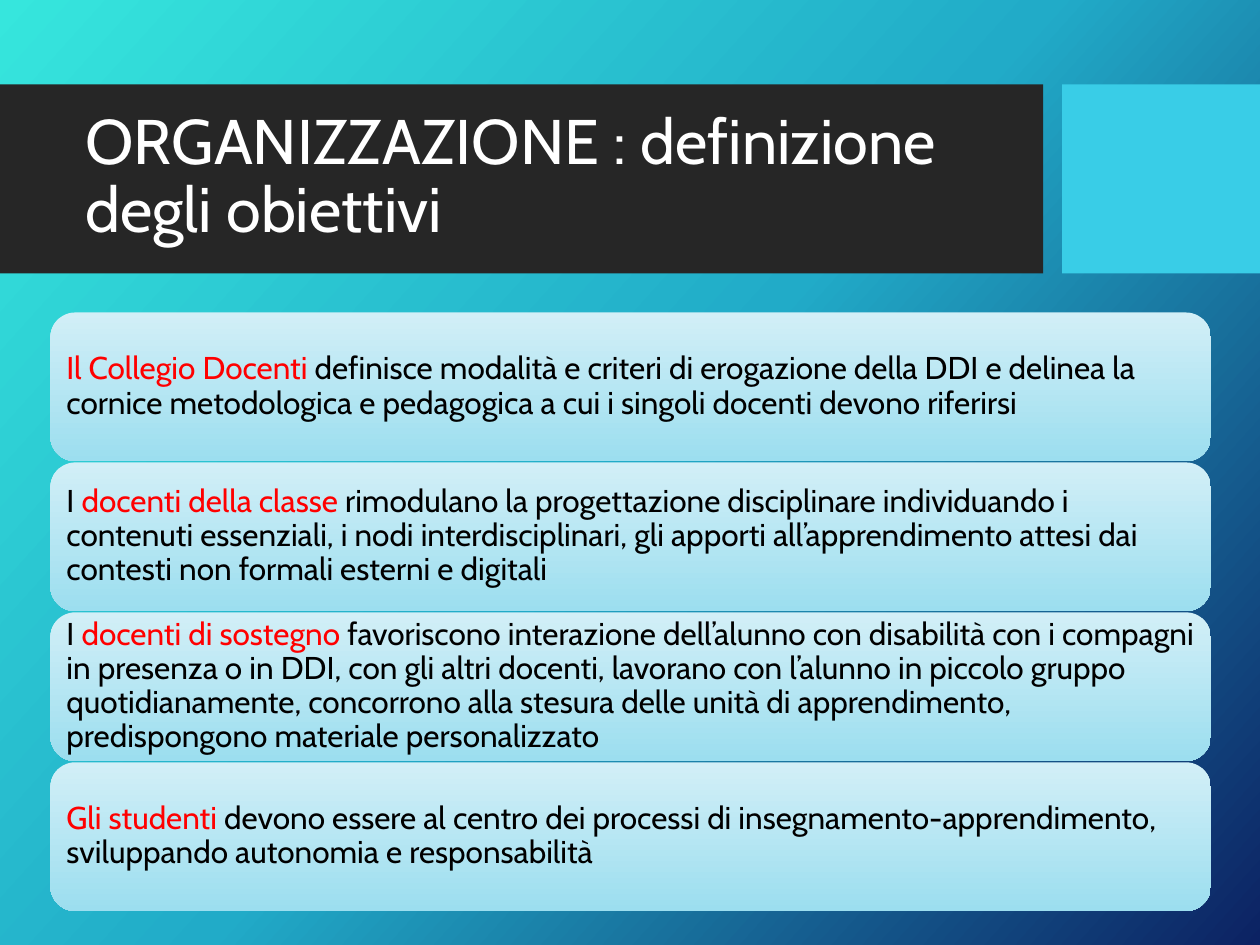
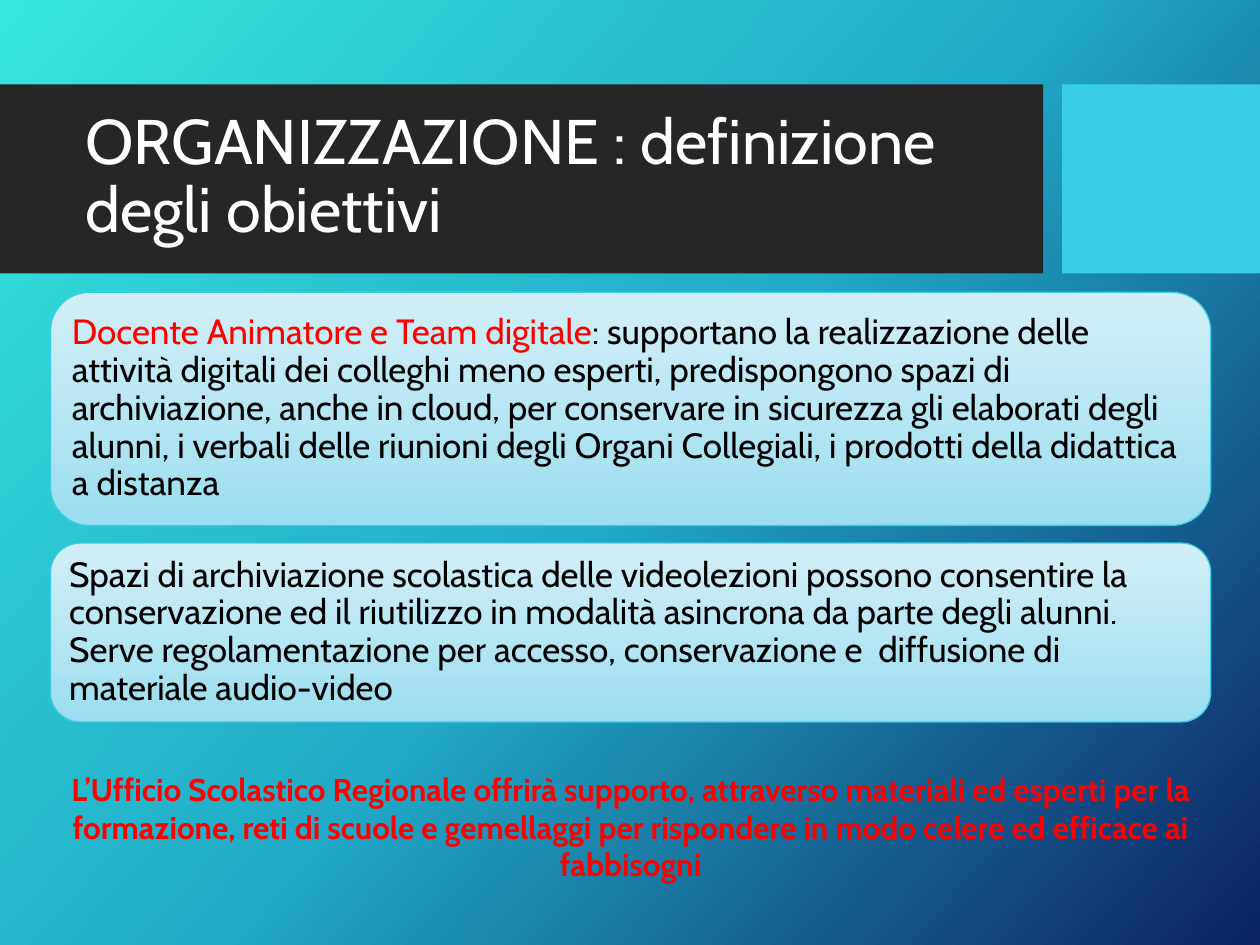
from copy import deepcopy

from pptx import Presentation
from pptx import util as u
from pptx.dml.color import RGBColor
from pptx.enum import shapes, text
from pptx.oxml.ns import qn

PX = 9144  # EMU per px, 100 px to the inch
FONT = "Cabin"
COLORS = {
    "band": "262626", "accent": "39CDE7", "title": "FFFFFF",
    "ink": "000000", "key": "FF0000",
}
BACKGROUND = [(0, "36E6DD"), (0.5, "21ABC8"), (1, "0C2263")]
CARD = [(0, "D2EFF7"), (1, "9CDEEF")]
TITLE = "ORGANIZZAZIONE : definizione degli obiettivi"
CARD_LEFT, CARD_WIDTH = 40, 921

ROLES = [
    [("Il Collegio Docenti ", "key"),
     ("definisce modalità e criteri di erogazione della DDI e delinea la cornice "
      "metodologica e pedagogica a cui i singoli docenti devono riferirsi", "ink")],
    [("I ", "ink"), ("docenti della classe ", "key"),
     ("rimodulano la progettazione disciplinare individuando i contenuti essenziali, "
      "i nodi interdisciplinari, gli apporti all’apprendimento attesi dai contesti "
      "non formali esterni e digitali", "ink")],
    [("I ", "ink"), ("docenti di sostegno ", "key"),
     ("favoriscono interazione dell’alunno con disabilità con i compagni in presenza "
      "o in DDI, con gli altri docenti, lavorano con l’alunno in piccolo gruppo "
      "quotidianamente, concorrono alla stesura delle unità di apprendimento, "
      "predispongono materiale personalizzato", "ink")],
    [("Gli studenti ", "key"),
     ("devono essere al centro dei processi di insegnamento-apprendimento, "
      "sviluppando autonomia e responsabilità", "ink")],
]
DIGITAL_TEAM = [
    ("Docente Animatore e Team digitale", "key"),
    (": supportano la realizzazione delle attività digitali dei colleghi meno esperti, "
     "predispongono spazi di archiviazione, anche in cloud, per conservare in sicurezza "
     "gli elaborati degli alunni, i verbali delle riunioni degli Organi Collegiali, "
     "i prodotti della didattica a distanza", "ink"),
]
ARCHIVE = [
    ("Spazi di archiviazione scolastica delle videolezioni possono consentire la "
     "conservazione ed il riutilizzo in modalità asincrona da parte degli alunni. "
     "Serve regolamentazione per accesso, conservazione e  diffusione di materiale "
     "audio-video", "ink"),
]
SUPPORT = [
    ("L’Ufficio Scolastico Regionale offrirà supporto, attraverso materiali ed esperti "
     "per la formazione, reti di scuole e gemellaggi per rispondere in modo celere ed "
     "efficace ai fabbisogni", "key"),
]


class SlideBuilder:
    def __init__(self):
        self.deck = Presentation()
        self.deck.slide_width, self.deck.slide_height = 1000 * PX, 750 * PX
        self.page = None

    def new_page(self):
        """Start a slide with the shared background, bands and title."""
        self.page = self.deck.slides.add_slide(self.deck.slide_layouts[6])
        self.gradient(self.page.background.fill, self.page.element, BACKGROUND, 42)
        self.band(0, 828, "band")
        self.band(843, 157, "accent")
        self.text_box(58, 82, 754, 118, [(TITLE, "title")], 36,
                      anchor=text.MSO_ANCHOR.MIDDLE, line_spacing=0.9)

    def gradient(self, fill, owner, stops, angle):
        """Fill with (position, hex) stops; angle is clockwise degrees."""
        fill.gradient()
        stop_list = owner.find(".//" + qn("a:gsLst"))
        while len(stop_list) < len(stops):
            stop_list.append(deepcopy(stop_list[-1]))
        for stop, (position, color) in zip(fill.gradient_stops, stops):
            stop.position = position
            stop.color.rgb = RGBColor.from_string(color)
        fill.gradient_angle = 360 - angle

    def shape(self, kind, left, top, width, height):
        box = self.page.shapes.add_shape(
            kind, left * PX, top * PX, width * PX, height * PX)
        box.shadow.inherit = False
        box.line.fill.background()
        return box

    def band(self, left, width, color):
        box = self.shape(shapes.MSO_SHAPE.RECTANGLE, left, 67, width, 150)
        box.fill.solid()
        box.fill.fore_color.rgb = RGBColor.from_string(COLORS[color])

    def card(self, top, height, spans, size, margin, outlined=False):
        box = self.shape(shapes.MSO_SHAPE.ROUNDED_RECTANGLE,
                         CARD_LEFT, top, CARD_WIDTH, height)
        self.gradient(box.fill, box.element, CARD, 90)
        if outlined:
            box.line.color.rgb = RGBColor.from_string(COLORS["accent"])
            box.line.width = u.Pt(0.75)
        frame = box.text_frame
        frame.margin_left = frame.margin_right = margin * PX
        frame.margin_top = frame.margin_bottom = margin * PX
        self.set_spans(frame, spans, size,
                       anchor=text.MSO_ANCHOR.MIDDLE, line_spacing=0.9)

    def text_box(self, left, top, width, height, spans, size, **style):
        box = self.page.shapes.add_textbox(
            left * PX, top * PX, width * PX, height * PX)
        self.set_spans(box.text_frame, spans, size, **style)

    def set_spans(self, frame, spans, size, anchor=text.MSO_ANCHOR.TOP,
                  align=text.PP_ALIGN.LEFT, line_spacing=1.0, bold=False):
        """Fill the frame with one paragraph of (wording, colour name) spans."""
        frame.word_wrap = True
        frame.vertical_anchor = anchor
        para = frame.paragraphs[0]
        para.alignment = align
        para.line_spacing = line_spacing
        for wording, color in spans:
            span = para.add_run()
            span.text = wording
            span.font.name = FONT
            span.font.size = u.Pt(size)
            span.font.bold = bold
            span.font.color.rgb = RGBColor.from_string(COLORS[color])


def main():
    builder = SlideBuilder()

    builder.new_page()
    for row, role in enumerate(ROLES):
        builder.card(248 + row * 119, 118, role, 18, margin=7)

    builder.new_page()
    builder.card(232, 185, DIGITAL_TEAM, 20, margin=8, outlined=True)
    builder.card(431, 142, ARCHIVE, 20, margin=8, outlined=True)
    builder.text_box(CARD_LEFT, 606, CARD_WIDTH, 101, SUPPORT, 18,
                     align=text.PP_ALIGN.CENTER, bold=True)

    builder.deck.save("out.pptx")


if __name__ == "__main__":
    main()
